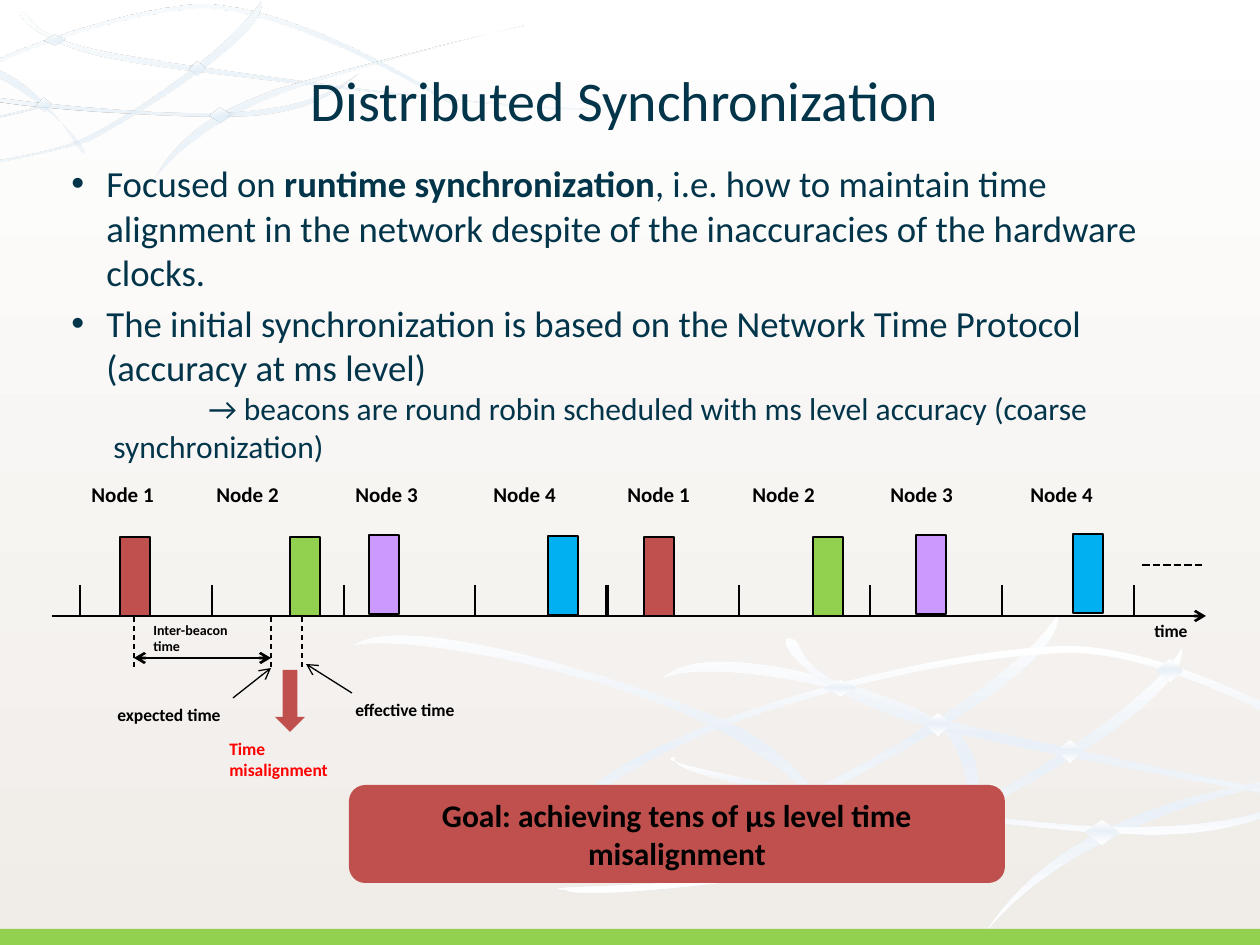
from lxml import etree
from pptx import Presentation
from pptx import util as u
from pptx.dml.color import RGBColor
from pptx.enum import dml, shapes, text
from pptx.oxml import ns

EMU_PER_PX = 914400 / 126
BLACK, WHITE = RGBColor(0x00, 0x00, 0x00), RGBColor(0xFF, 0xFF, 0xFF)
NAVY, RED = RGBColor(0x02, 0x34, 0x4A), RGBColor(0xFF, 0x00, 0x00)
BRICK, GREEN = RGBColor(0xC0, 0x50, 0x4D), RGBColor(0x92, 0xD0, 0x50)
LILAC, SKY = RGBColor(0xCC, 0x99, 0xFF), RGBColor(0x00, 0xB0, 0xF0)
CREAM, ICE = RGBColor(0xF0, 0xEC, 0xE8), RGBColor(0xCA, 0xE2, 0xF3)
FROST, MIST = RGBColor(0xF4, 0xF9, 0xFC), RGBColor(0xEA, 0xF0, 0xF7)

# Gradient: angle, then (position %, colour, opacity %) stops
PAGE = (90, [(0, WHITE, 100), (100, CREAM, 100)])
TOP_WEB = (260, [(0, ICE, 20), (68, FROST, 100), (100, WHITE, 100)])
BOTTOM_WEB = (90, [(0, WHITE, 100), (45, MIST, 100), (100, WHITE, 100)])

# Each ribbon is a closed chain of four cubic curves: start, then control points
TOP_RIBBONS = [
    [(-112, 164), (-147, 97), (93, 13), (190, 5), (286, -4), (455, 101),
     (465, 113), (495, 130), (290, 0), (193, 9), (97, 16), (-118, 88)],
    [(261, 1), (268, 40), (108, 131), (91, 140), (73, 149), (-87, 181),
     (-102, 174), (-136, 173), (25, 166), (86, 137), (145, 108), (234, 43)],
    [(595, 107), (586, 120), (219, 71), (125, 55), (30, 39), (33, 19),
     (26, 14), (9, 4), (28, 45), (122, 60), (217, 77), (571, 113)],
    [(-239, 34), (-210, 10), (-63, 47), (-10, 66), (44, 86), (74, 142),
     (81, 152), (97, 163), (59, 105), (-13, 72), (-84, 39), (-210, 25)],
    [(48, 105), (-175, 158), (-218, 146), (-239, 147), (-262, 150), (-490, 154),
     (-505, 146), (-541, 145), (-268, 146), (-176, 139), (-84, 132), (0, 122)],
    [(155, 179), (185, 123), (238, 105), (267, 93), (296, 81), (519, 26),
     (525, 26), (539, 21), (336, 71), (275, 96), (213, 121), (174, 154)],
    [(358, 74), (310, 116), (255, 115), (224, 116), (193, 117), (-52, 107),
     (-42, 88), (-71, 93), (141, 116), (223, 112), (306, 108), (331, 92)]]
SWEEP = [(1058, 614), (1066, 679), (794, 809), (762, 822), (732, 834), (466, 869),
         (442, 856), (385, 851), (651, 857), (753, 816), (857, 776), (1019, 679)]
BOTTOM_RIBBONS = [
    [(663, 678), (711, 633), (897, 693), (948, 726), (999, 757), (975, 849),
     (968, 869), (969, 903), (987, 756), (936, 725), (885, 693), (716, 656)],
    SWEEP,
    [(549, 873), (500, 759), (906, 649), (1065, 646), (1223, 644), (1488, 834),
     (1503, 857), (1552, 887), (1229, 650), (1070, 653), (911, 655), (548, 748)],
    [(x + 124, y + 34) for x, y in SWEEP],
    [(1719, 862), (1704, 882), (1105, 759), (951, 722), (798, 685), (804, 651),
     (796, 641), (767, 624), (793, 694), (946, 731), (1100, 767), (1678, 869)],
    [(355, 645), (407, 609), (644, 685), (730, 723), (815, 762), (858, 858),
     (868, 876), (895, 895), (839, 796), (725, 733), (610, 670), (404, 634)],
    [(988, 929), (1045, 844), (1133, 816), (1182, 800), (1231, 784), (1603, 718),
     (1613, 721), (1637, 714), (1299, 770), (1193, 805), (1089, 839), (1022, 888)],
    [(1333, 779), (1250, 843), (1159, 835), (1108, 833), (1056, 832), (656, 786),
     (675, 757), (626, 762), (971, 823), (1108, 827), (1244, 830), (1288, 805)]]
TOP_KNOTS = [(189, 62, 16, 14), (45, 35, 20, 10), (37, 98, 15, 14), (210, 108, 21, 15)]
BOTTOM_KNOTS = [(1057, 740, 26, 23), (824, 680, 33, 16), (925, 713, 26, 23),
                (1157, 659, 26, 23), (801, 784, 24, 21), (1085, 820, 34, 25)]

# Node number, label left, beacon left, beacon top
BEACONS = [(1, 79, 120, 537), (2, 204, 290, 537), (3, 343, 369, 535), (4, 481, 548, 536),
           (1, 615, 644, 537), (2, 740, 813, 537), (3, 878, 916, 535), (4, 1018, 1073, 534)]
NODE_COLORS = {1: BRICK, 2: GREEN, 3: LILAC, 4: SKY}


def px(length):
    return u.Emu(round(length * EMU_PER_PX))


def set_gradient(fill, gradient):
    angle, stops = gradient
    fill.gradient()
    fill.gradient_angle = (360 - angle) % 360
    stop_list = fill._xPr.find(".//" + ns.qn("a:gsLst"))
    for stop in list(stop_list):
        stop_list.remove(stop)
    for position, color, opacity in stops:
        stop = etree.SubElement(stop_list, ns.qn("a:gs"), pos=str(position * 1000))
        value = etree.SubElement(stop, ns.qn("a:srgbClr"), val=str(color))
        if opacity < 100:
            etree.SubElement(value, ns.qn("a:alpha"), val=str(opacity * 1000))


def add_ribbon(slide, controls, gradient):
    """Build the control polygon, then join its segments by threes into curves."""
    points = [(px(x), px(y)) for x, y in controls]
    builder = slide.shapes.build_freeform(*points[0])
    builder.add_line_segments(points[1:] + points[:1], close=True)
    shape = builder.convert_to_shape()
    segments = list(shape._element.iter(ns.qn("a:lnTo")))
    for first in range(0, len(segments), 3):
        curve = etree.Element(ns.qn("a:cubicBezTo"))
        segments[first].addprevious(curve)
        for segment in segments[first:first + 3]:
            curve.append(segment[0])
            segment.getparent().remove(segment)
    shape.shadow.inherit = False
    shape.line.fill.background()
    set_gradient(shape.fill, gradient)


def add_block(slide, kind, box, color, outlined=False):
    shape = slide.shapes.add_shape(kind, *map(px, box))
    shape.shadow.inherit = False
    shape.fill.solid()
    shape.fill.fore_color.rgb = color
    shape.line.fill.background()
    if outlined:
        shape.line.color.rgb = BLACK
        shape.line.width = u.Pt(0.75)
    return shape


def add_web(slide, ribbons, knots, gradient, rotation=0):
    for ribbon in ribbons:
        add_ribbon(slide, ribbon, gradient)
    for box in knots:
        knot = add_block(slide, shapes.MSO_SHAPE.DIAMOND, box, WHITE)
        knot.rotation = rotation
        set_gradient(knot.fill, gradient)


def add_line(slide, start, end, width=1.5, dash=None, arrows=()):
    line = slide.shapes.add_connector(shapes.MSO_CONNECTOR.STRAIGHT, *map(px, start + end))
    line.line.color.rgb = BLACK
    line.line.width = u.Pt(width)
    line.line.dash_style = dash
    for arrow in arrows:
        etree.SubElement(line.line._get_or_add_ln(), ns.qn(arrow), type="arrow")
    etree.SubElement(line._element.spPr, ns.qn("a:effectLst"))


def write(shape, content, size, color=BLACK, bold=True, align=text.PP_ALIGN.LEFT, wrap=False):
    shape.text_frame.word_wrap = wrap
    shape.text_frame.text = content
    for paragraph in shape.text_frame.paragraphs:
        paragraph.alignment = align
        style_runs(paragraph, size, color, bold)


def style_runs(paragraph, size, color, bold=False):
    for run in paragraph.runs:
        run.font.name, run.font.size, run.font.bold = "Calibri", u.Pt(size), bold
        run.font.color.rgb = color


def add_label(slide, box, *content, **style):
    label = slide.shapes.add_textbox(*map(px, box))
    write(label, *content, **style)
    return label


def set_indent(paragraph, margin, first_line, bullet=None):
    properties = paragraph._p.get_or_add_pPr()
    properties.set("marL", str(px(margin)))
    properties.set("indent", str(px(first_line)))
    if bullet:
        paragraph.space_before = u.Pt(4)
        etree.SubElement(properties, ns.qn("a:buFont"), typeface="Arial")
        etree.SubElement(properties, ns.qn("a:buChar"), char=bullet)


def add_body(slide):
    body = add_label(slide, (59, 155, 1134, 764),
                     "Focused on \nThe initial synchronization is based on the Network Time Protocol "
                     "(accuracy at ms level)\n→ beacons are round robin scheduled with ms level "
                     "accuracy (coarse synchronization)", 21, NAVY, bold=False, wrap=True)
    focus, initial, beacons = body.text_frame.paragraphs
    focus.add_run().text = "runtime synchronization"
    focus.add_run().text = (", i.e. how to maintain time alignment in the network despite of the "
                            "inaccuracies of the hardware clocks.")
    style_runs(focus, 21, NAVY)
    focus.runs[1].font.bold = True
    set_indent(focus, 35, -35, "•")
    set_indent(initial, 35, -35, "•")
    set_indent(beacons, 42, 95)
    style_runs(beacons, 18, NAVY)


def add_timeline(slide):
    add_line(slide, (52, 616), (1206, 616), arrows=["a:tailEnd"])
    for index in range(9):
        x = 80 + round(index * 131.75)
        add_line(slide, (x, 585), (x, 615), width=2.25 if index == 4 else 1.5)
    for node, label_left, left, top in BEACONS:
        add_block(slide, shapes.MSO_SHAPE.RECTANGLE, (left, top, 30, 79), NODE_COLORS[node], outlined=True)
        add_label(slide, (label_left, 475, 96, 38), f"Node {node}", 12)
    add_line(slide, (1142, 565), (1203, 565), dash=dml.MSO_LINE.SQUARE_DOT)
    add_label(slide, (1142, 614, 62, 34), "time", 10)


def add_misalignment(slide):
    add_line(slide, (134, 658), (271, 658), arrows=["a:headEnd", "a:tailEnd"])
    for x in (134, 271, 302):
        add_line(slide, (x, 617), (x, 669), width=0.75, dash=dml.MSO_LINE.DASH)
    for start, end in (((233, 698), (271, 668)), ((352, 693), (306, 664))):
        add_line(slide, start, end, width=0.75, arrows=["a:tailEnd"])
    add_block(slide, shapes.MSO_SHAPE.DOWN_ARROW, (275, 670, 30, 62), BRICK)
    add_label(slide, (105, 698, 142, 34), "expected time", 10)
    add_label(slide, (343, 693, 137, 34), "effective time", 10)
    add_label(slide, (217, 732, 139, 62), "Time\nmisalignment", 10, RED)
    add_label(slide, (141, 615, 111, 47), "Inter-beacon\ntime", 8)


def main():
    presentation = Presentation()
    presentation.slide_width, presentation.slide_height = px(1260), px(945)
    slide = presentation.slides.add_slide(presentation.slide_layouts[6])
    set_gradient(slide.background.fill, PAGE)
    add_web(slide, TOP_RIBBONS, TOP_KNOTS, TOP_WEB, rotation=356)
    add_web(slide, BOTTOM_RIBBONS, BOTTOM_KNOTS, BOTTOM_WEB)
    add_block(slide, shapes.MSO_SHAPE.RECTANGLE, (0, 929, 1260, 16), GREEN)
    title = add_label(slide, (55, 55, 1140, 88), "Distributed Synchronization", 32, NAVY,
                      bold=False, align=text.PP_ALIGN.CENTER, wrap=True)
    title.text_frame.vertical_anchor = text.MSO_ANCHOR.MIDDLE
    add_body(slide)
    add_timeline(slide)
    add_misalignment(slide)
    goal = add_block(slide, shapes.MSO_SHAPE.ROUNDED_RECTANGLE, (349, 785, 656, 98), BRICK)
    write(goal, "Goal: achieving tens of µs level time misalignment", 18,
          align=text.PP_ALIGN.CENTER, wrap=True)
    presentation.save("out.pptx")


if __name__ == "__main__":
    main()
